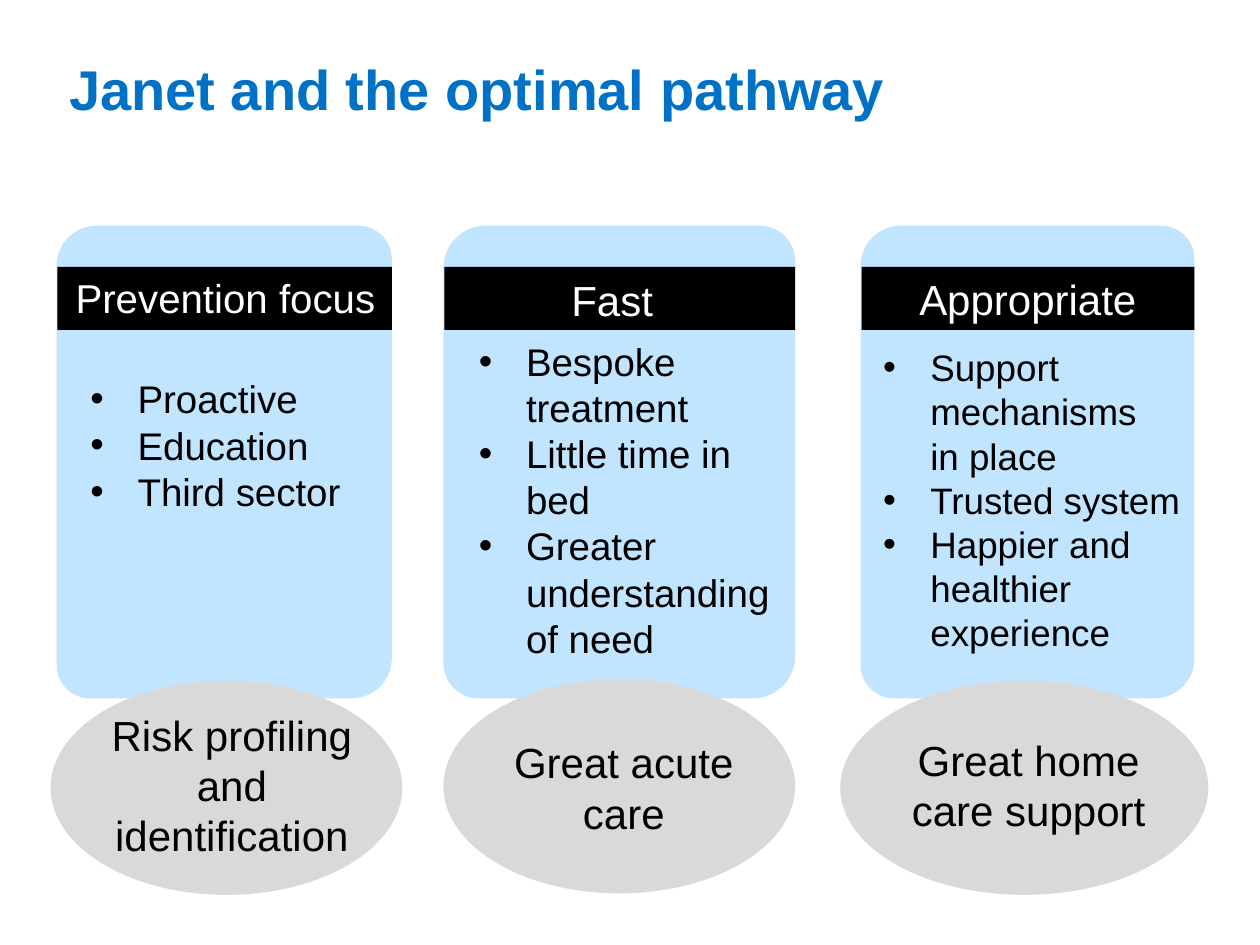
"""Build the slide on Janet and the optimal pathway."""
from lxml import etree
from pptx import Presentation
from pptx import util as u
from pptx.dml.color import RGBColor
from pptx.enum import shapes, text
from pptx.oxml.ns import qn

COLORS = {"title": "0072C6", "panel": "C1E5FF", "bar": "000000",
          "ellipse": "D9D9D9", "dark": "000000", "light": "FFFFFF"}
PANEL_TOP, PANEL_HEIGHT = 4.55, 9.53
BAR_TOP, BAR_HEIGHT = 5.38, 1.27
ELLIPSE_HEIGHT = 4.32

STAGES = [
    {"panel": (1.14, 6.76),
     "heading": ("Prevention focus", 23, (1.17, 5.38, 6.76, 1.24)),
     "points": (["Proactive", "Education", "Third sector"],
                22, (1.57, 7.44, 5.72, 3.07)),
     "ellipse": (1.02, 13.72, 7.09),
     "outcome": ("Risk profiling and identification", (1.73, 14.17, 5.89, 3.33))},
    {"panel": (8.94, 7.09),
     "heading": ("Fast", 24, (9.14, 5.41, 6.4, 1.27)),
     "points": (["Bespoke treatment", "Little time in bed",
                 "Greater understanding of need"],
                22, (9.4, 6.68, 6.71, 6.83)),
     "ellipse": (8.94, 13.69, 7.09),
     "outcome": ("Great acute care", (9.63, 14.73, 5.89, 2.31))},
    {"panel": (17.35, 6.73),
     "heading": ("Appropriate", 24, (17.86, 5.38, 5.72, 1.27)),
     "points": (["Support mechanisms \nin place", "Trusted system",
                 "Happier and healthier experience"],
                21, (17.55, 6.83, 7.34, 6.53)),
     "ellipse": (16.94, 13.72, 7.42),
     "outcome": ("Great home care support", (17.65, 14.68, 6.17, 2.31))},
]


class PathwaySlide:
    """Holds the style and the current slide."""

    font_name = "Arial"

    def __init__(self, slide):
        self.slide = slide

    def place(self, item, box):
        item.left, item.top, item.width, item.height = (u.Cm(v) for v in box)

    def style(self, paragraph, size, color, bold=False):
        font = paragraph.font
        font.name, font.size, font.bold = self.font_name, u.Pt(size), bold
        font.color.rgb = RGBColor.from_string(COLORS[color])

    def title(self, wording, box):
        heading = self.slide.shapes.title
        self.place(heading, box)
        frame = heading.text_frame
        frame.text = wording
        frame.vertical_anchor = text.MSO_ANCHOR.MIDDLE
        frame.paragraphs[0].alignment = text.PP_ALIGN.LEFT
        self.style(frame.paragraphs[0], 32, "title", bold=True)

    def shape(self, parent, kind, box, color, corners=()):
        block = parent.add_shape(kind, *(u.Cm(v) for v in box))
        for index, corner in enumerate(corners):
            block.adjustments[index] = corner
        block.shadow.inherit = False
        block.fill.solid()
        block.fill.fore_color.rgb = RGBColor.from_string(COLORS[color])
        block.line.fill.background()

    def label(self, parent, wording, size, box, color):
        frame = parent.add_textbox(*(u.Cm(v) for v in box)).text_frame
        frame.word_wrap = True
        frame.text = wording
        frame.paragraphs[0].alignment = text.PP_ALIGN.CENTER
        self.style(frame.paragraphs[0], size, color)

    def bullets(self, body, points, size, box):
        self.place(body, box)
        self.slide.shapes._spTree.append(body._element)
        frame = body.text_frame
        frame.auto_size = text.MSO_AUTO_SIZE.NONE
        frame.vertical_anchor = text.MSO_ANCHOR.TOP
        for index, point in enumerate(points):
            paragraph = frame.add_paragraph() if index else frame.paragraphs[0]
            for part, line in enumerate(point.split("\n")):
                if part:
                    paragraph.add_line_break()
                paragraph.add_run().text = line
            paragraph.space_before = u.Pt(0)
            properties = paragraph._p.get_or_add_pPr()
            properties.set("marL", str(u.Cm(0.95)))
            properties.set("indent", str(-u.Cm(0.95)))
            etree.SubElement(properties, qn("a:buFont"), typeface=self.font_name)
            etree.SubElement(properties, qn("a:buChar"), char="•")
            self.style(paragraph, size, "dark")

    def stage(self, body, panel, heading, points, ellipse, outcome):
        root = self.slide.shapes
        left, width = panel
        self.shape(root, shapes.MSO_SHAPE.ROUND_2_DIAG_RECTANGLE,
                   (left, PANEL_TOP, width, PANEL_HEIGHT), "panel", (0.12, 0.1))
        self.shape(root, shapes.MSO_SHAPE.RECTANGLE,
                   (left + 0.02, BAR_TOP, width - 0.02, BAR_HEIGHT), "bar")
        self.label(root, *heading, "light")
        self.bullets(body, *points)
        group = root.add_group_shape().shapes
        self.shape(group, shapes.MSO_SHAPE.OVAL, (*ellipse, ELLIPSE_HEIGHT), "ellipse")
        wording, box = outcome
        self.label(group, wording, 24, box, "dark")


def main():
    deck = Presentation()
    deck.slide_width, deck.slide_height = u.Cm(25.4), u.Cm(19.05)
    slide = deck.slides.add_slide(deck.slide_layouts.get_by_name("Comparison"))
    pathway = PathwaySlide(slide)
    pathway.title("Janet and the optimal pathway", (1.14, 0.86, 20.45, 1.85))
    bodies = {holder.placeholder_format.idx: holder for holder in slide.placeholders}
    for index, stage in zip((1, 2, 4), STAGES):
        pathway.stage(bodies.pop(index), **stage)
    for index in (3, 10, 11, 12):
        if index in bodies:
            unused = bodies[index]._element
            unused.getparent().remove(unused)
    deck.save("out.pptx")


if __name__ == "__main__":
    main()
